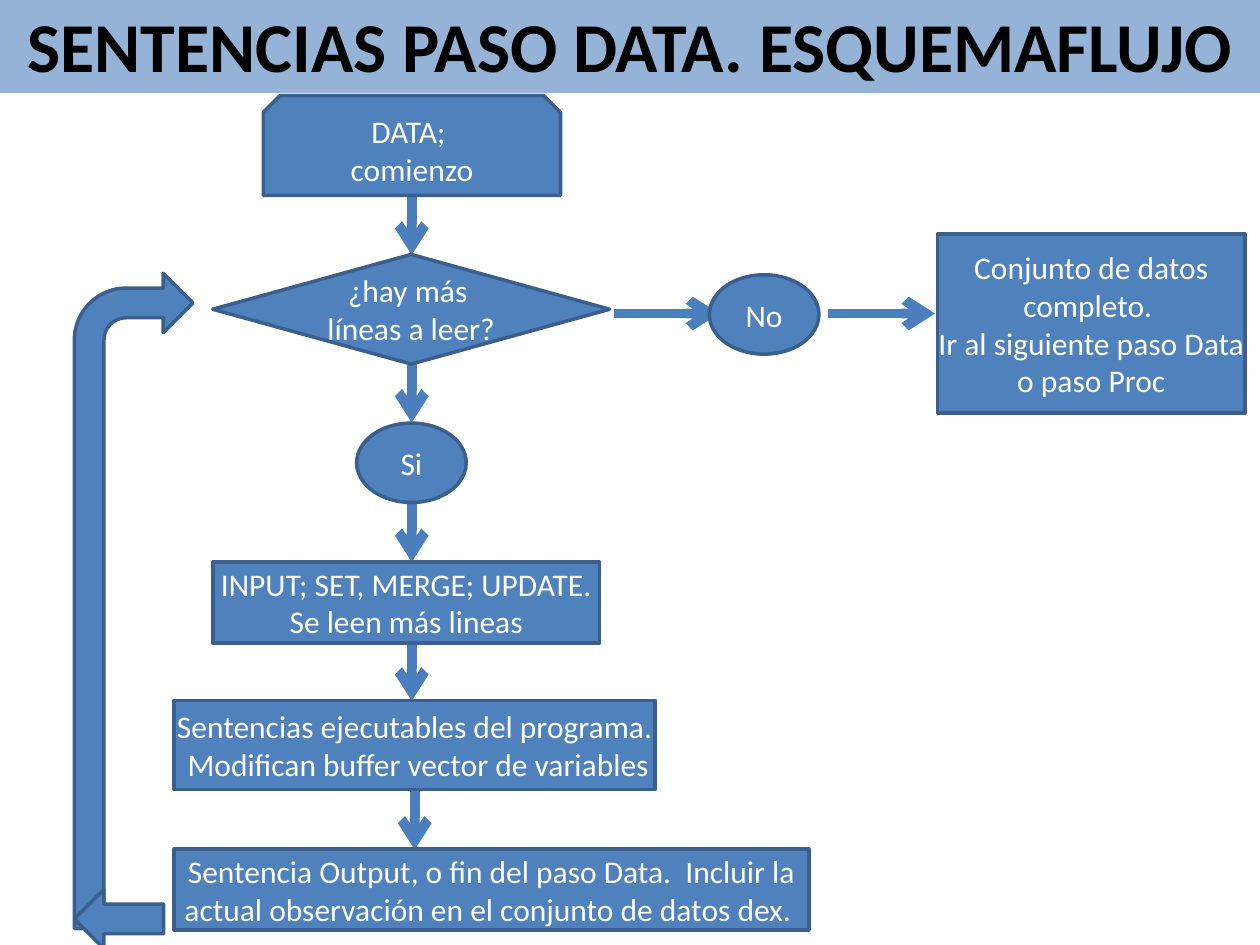
from dataclasses import dataclass

from lxml import etree
from pptx import Presentation
from pptx import util as u
from pptx.dml.color import RGBColor
from pptx.enum import shapes, text
from pptx.oxml import ns

FONT = "Calibri"
BLACK = RGBColor(0x00, 0x00, 0x00)
WHITE = RGBColor(0xFF, 0xFF, 0xFF)
BANNER = RGBColor(0x95, 0xB3, 0xD7)
FILL = RGBColor(0x4F, 0x81, 0xBD)
OUTLINE = RGBColor(0x3A, 0x5F, 0x8C)
ARROW = RGBColor(0x4B, 0x7E, 0xBC)
KIND = shapes.MSO_SHAPE

DOWN_LENGTH = 1.2
MAIN_AXIS = 8.3
BRANCH_AXIS = 6.32


@dataclass(frozen=True)
class Node:
    kind: shapes.MSO_SHAPE
    left: float
    top: float
    width: float
    height: float
    lines: tuple[str, ...] = ()
    inset: bool = False


@dataclass(frozen=True)
class Arrow:
    x1: float
    y1: float
    x2: float
    y2: float


def down(top: float, x: float = MAIN_AXIS) -> Arrow:
    return Arrow(x, top, x, top + DOWN_LENGTH)


def right(start: float, end: float) -> Arrow:
    return Arrow(start, BRANCH_AXIS, end, BRANCH_AXIS)


BANNER_NODE = Node(KIND.RECTANGLE, 0, -0.08, 25.4, 1.96,
                   ("SENTENCIAS PASO DATA. ESQUEMAFLUJO",), True)

ARROWS = [
    down(3.94),
    down(7.32),
    down(10.13),
    down(12.93),
    down(15.93, 8.36),
    right(12.37, 14.5),
    right(16.69, 18.85),
]

NODES = [
    Node(KIND.SNIP_2_SAME_RECTANGLE, 5.31, 1.93, 5.99, 2.01, ("DATA; ", "comienzo")),
    Node(KIND.DIAMOND, 4.29, 5.13, 8, 2.21, ("¿hay más  líneas a leer?",)),
    Node(KIND.OVAL, 14.3, 5.54, 2.21, 1.6, ("No",), True),
    Node(KIND.RECTANGLE, 18.9, 4.72, 6.2, 3.61,
         ("Conjunto de datos completo. ", "Ir al siguiente paso Data o paso Proc")),
    Node(KIND.OVAL, 7.19, 8.53, 2.21, 1.6, ("Si",), True),
    Node(KIND.RECTANGLE, 4.29, 11.33, 7.8, 1.63,
         ("INPUT; SET, MERGE; UPDATE. Se leen más lineas",)),
    Node(KIND.RECTANGLE, 3.51, 14.12, 9.7, 1.8,
         ("Sentencias ejecutables del programa.  Modifican buffer vector de variables",)),
    Node(KIND.RECTANGLE, 3.51, 17.12, 12.8, 1.63,
         ("Sentencia Output, o fin del paso Data.  Incluir la actual "
          "observación en el conjunto de datos dex. ",)),
    Node(KIND.BENT_ARROW, 1.5, 5.51, 2.39, 13.21),
    Node(KIND.LEFT_ARROW, 1.5, 17.93, 1.8, 1.19),
]


def write_text(shape, lines: tuple[str, ...], *, size: int = 18,
               color: RGBColor = WHITE, bold: bool = False, inset: bool = False,
               anchor: text.MSO_ANCHOR = text.MSO_ANCHOR.MIDDLE) -> None:
    frame = shape.text_frame
    frame.word_wrap = True
    frame.vertical_anchor = anchor
    if not inset:
        frame.margin_left = frame.margin_right = 0
        frame.margin_top = frame.margin_bottom = 0
    for index, line in enumerate(lines):
        paragraph = frame.add_paragraph() if index else frame.paragraphs[0]
        paragraph.alignment = text.PP_ALIGN.CENTER
        run = paragraph.add_run()
        run.text = line
        run.font.name = FONT
        run.font.size = u.Pt(size)
        run.font.bold = bold
        run.font.color.rgb = color


def draw_shape(slide, node: Node, fill: RGBColor, outline: RGBColor | None = None):
    box = (node.left, node.top, node.width, node.height)
    shape = slide.shapes.add_shape(node.kind, *map(u.Cm, box))
    shape.shadow.inherit = False
    shape.fill.solid()
    shape.fill.fore_color.rgb = fill
    if outline is None:
        shape.line.fill.background()
    else:
        shape.line.color.rgb = outline
        shape.line.width = u.Pt(2)
    return shape


def draw_arrow(slide, arrow: Arrow) -> None:
    ends = (arrow.x1, arrow.y1, arrow.x2, arrow.y2)
    connector = slide.shapes.add_connector(
        shapes.MSO_CONNECTOR.STRAIGHT, *map(u.Cm, ends))
    connector.line.color.rgb = ARROW
    connector.line.width = u.Pt(5.5)
    properties = connector.element.spPr
    line = properties.find(ns.qn("a:ln"))
    etree.SubElement(line, ns.qn("a:tailEnd"), type="arrow")
    etree.SubElement(properties, ns.qn("a:effectLst"))


def main() -> None:
    presentation = Presentation()
    presentation.slide_width = u.Cm(25.4)
    presentation.slide_height = u.Cm(19.05)
    slide = presentation.slides.add_slide(presentation.slide_layouts[6])

    banner = draw_shape(slide, BANNER_NODE, BANNER)
    write_text(banner, BANNER_NODE.lines, size=40, color=BLACK, bold=True,
               inset=BANNER_NODE.inset, anchor=text.MSO_ANCHOR.TOP)
    for arrow in ARROWS:
        draw_arrow(slide, arrow)
    for node in NODES:
        shape = draw_shape(slide, node, FILL, OUTLINE)
        if node.lines:
            write_text(shape, node.lines, inset=node.inset)

    presentation.save("out.pptx")


if __name__ == "__main__":
    main()
